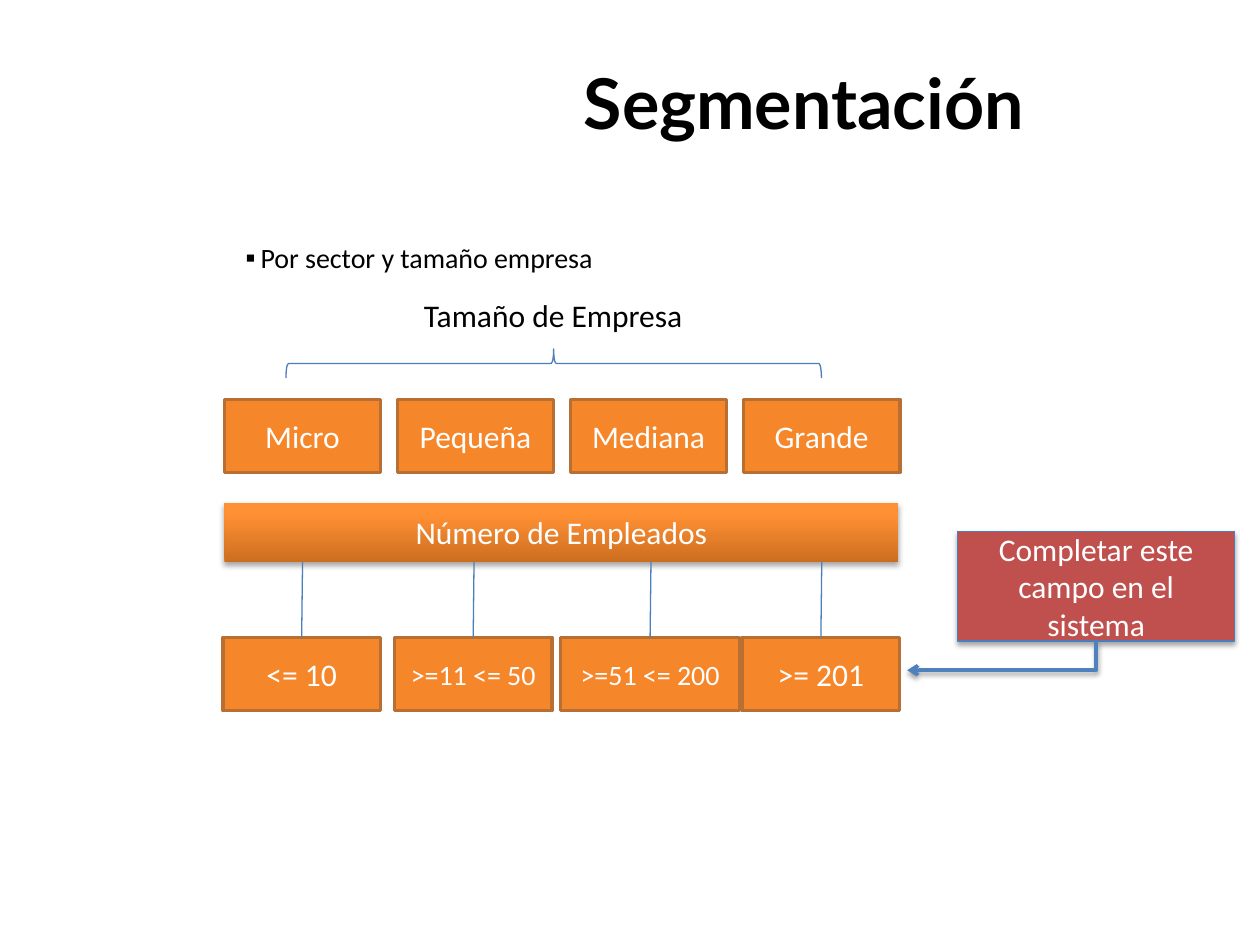
from pptx import Presentation
from pptx.dml.color import RGBColor
from pptx.enum.shapes import MSO_CONNECTOR as Link, MSO_SHAPE as Shape
from pptx.enum.text import MSO_ANCHOR as Anchor, PP_ALIGN as Align
from pptx.oxml.ns import qn
from pptx.util import Pt
from lxml.etree import SubElement

ORANGE, BROWN, BLUE, WHITE, BLACK = "F6862A", "B76F34", "4B7EBC", "FFFFFF", "000000"


def color(value):
    """Turn a hex string into a colour."""
    return RGBColor.from_string(value)


def write(box, text, size, ink, font="Calibri", bold=False, align=Align.CENTER):
    """Write one paragraph in a box and return it."""
    frame = box.text_frame
    frame.word_wrap = True
    frame.vertical_anchor = Anchor.MIDDLE
    para = frame.paragraphs[0]
    para.text = text
    para.alignment = align
    para.font.name, para.font.size, para.font.bold = font, Pt(size), bold
    para.font.color.rgb = color(ink)
    return para


def add_text(page, left, top, width, height, text, size, **style):
    """Add a black text box and return its paragraph."""
    box = page.shapes.add_textbox(Pt(left), Pt(top), Pt(width), Pt(height))
    return write(box, text, size, BLACK, **style)


def add_box(page, left, top, width, height, text, size=18, fill=ORANGE, line=BROWN, weight=2):
    """Add a filled rectangle with centred white text."""
    box = page.shapes.add_shape(Shape.RECTANGLE, Pt(left), Pt(top), Pt(width), Pt(height))
    box.shadow.inherit = False
    box.fill.solid()
    box.fill.fore_color.rgb = color(fill)
    box.line.color.rgb = color(line)
    box.line.width = Pt(weight)
    write(box, text, size, WHITE)
    return box


def add_line(page, kind, x1, y1, x2, y2, ink, weight):
    """Add a connector without a shadow."""
    line = page.shapes.add_connector(kind, Pt(x1), Pt(y1), Pt(x2), Pt(y2))
    line.line.color.rgb = color(ink)
    line.line.width = Pt(weight)
    SubElement(line.element.spPr, qn("a:effectLst"))
    return line


def drop_shadow(shape, opacity):
    """Give a shape a soft shadow straight below it."""
    effects = shape.element.spPr.find(qn("a:effectLst"))
    shadow = SubElement(effects, qn("a:outerShdw"), blurRad=str(Pt(3.1)), dist=str(Pt(1.8)),
                        dir="5400000", rotWithShape="0")
    tint = SubElement(shadow, qn("a:srgbClr"), val=BLACK)
    SubElement(tint, qn("a:alpha"), val=str(opacity * 1000))


def add_heading(page, left, top):
    """Place the title and the bullet under it."""
    add_text(page, left, top, 648, 90, "Segmentación", 40, font="Lato", bold=True)
    para = add_text(page, left - 2.2, top + 120.9, 270, 26.6, "", 16)
    props = para._p.get_or_add_pPr()
    props.set("marL", str(Pt(8.6)))
    props.set("indent", str(-Pt(8.6)))
    SubElement(props, qn("a:buFont"), typeface="Calibri")
    SubElement(props, qn("a:buChar"), char="▪")
    para.text = "Por sector y tamaño empresa"
    para.alignment = Align.LEFT


def add_sizes(page, left, top):
    """Place the company sizes under their brace and label."""
    add_text(page, left + 15.8, top, 344.2, 28.8, "Tamaño de Empresa", 18)
    span, depth = 306, 16.6
    center_x, center_y = left + 188.2, top + 42.1
    brace = page.shapes.add_shape(Shape.RIGHT_BRACE, Pt(center_x - depth / 2),
                                  Pt(center_y - span / 2), Pt(depth), Pt(span))
    brace.rotation = 270
    brace.shadow.inherit = False
    brace.fill.background()
    brace.line.color.rgb = color(BLUE)
    brace.line.width = Pt(0.75)
    for index, name in enumerate(["Micro", "Pequeña", "Mediana", "Grande"]):
        add_box(page, left + index * 98.9, top + 62.6, 89.3, 41.8, name)


def add_employees(page, left, top):
    """Place the employee bar and the ranges that hang from it."""
    height = 33.8
    bar = add_box(page, left, top, 385.2, height, "Número de Empleados")
    bar.line.fill.background()
    bar.fill.gradient()
    bar.fill.gradient_angle = 90
    for stop, (position, tint) in zip(bar.fill.gradient_stops, [(0, "CC6E20"), (0.8, "FF9034")]):
        stop.position = position
        stop.color.rgb = color(tint)
    drop_shadow(bar, 35)
    ranges = [("<= 10", -0.8, 90, 18), (">=11 <= 50", 97.2, 90, 16),
              (">=51 <= 200", 192.2, 102.2, 16), (">= 201", 295.9, 90, 18)]
    for text, offset, width, size in ranges:
        box = add_box(page, left + offset, top + 77, width, 41.8, text, size)
        middle = left + offset + width / 2
        line = add_line(page, Link.STRAIGHT, middle + 0.5, top + height,
                        middle, top + 77, BLUE, 0.75)
        line.end_connect(box, 0)


def add_callout(page, left, top):
    """Place the red note and its bent arrow to the last range."""
    width, height = 158.4, 62.6
    note = add_box(page, left, top, width, height, "Completar este campo en el sistema",
                   fill="C0504D", line=BLUE, weight=0.75)
    drop_shadow(note, 35)
    drop, reach = 16.6, 108
    center_x = left + width / 2 - reach / 2
    center_y = top + height + drop / 2
    arrow = add_line(page, Link.ELBOW, center_x - drop / 2, center_y - reach / 2,
                     center_x + drop / 2, center_y + reach / 2, "4F81BD", 2)
    props = arrow.element.spPr
    props.find(qn("a:xfrm")).set("rot", "5400000")
    props.find(qn("a:prstGeom")).set("prst", "bentConnector2")
    SubElement(props.find(qn("a:ln")), qn("a:tailEnd"), type="arrow")
    drop_shadow(arrow, 38)


def main():
    """Build the segmentation slide."""
    deck = Presentation()
    deck.slide_width, deck.slide_height = Pt(720), Pt(540)
    page = deck.slides.add_slide(deck.slide_layouts[6])
    add_heading(page, 135.4, 13)
    add_sizes(page, 128.2, 165.6)
    add_employees(page, 128.2, 287.3)
    add_callout(page, 547.2, 303.8)
    deck.save("out.pptx")


if __name__ == "__main__":
    main()
